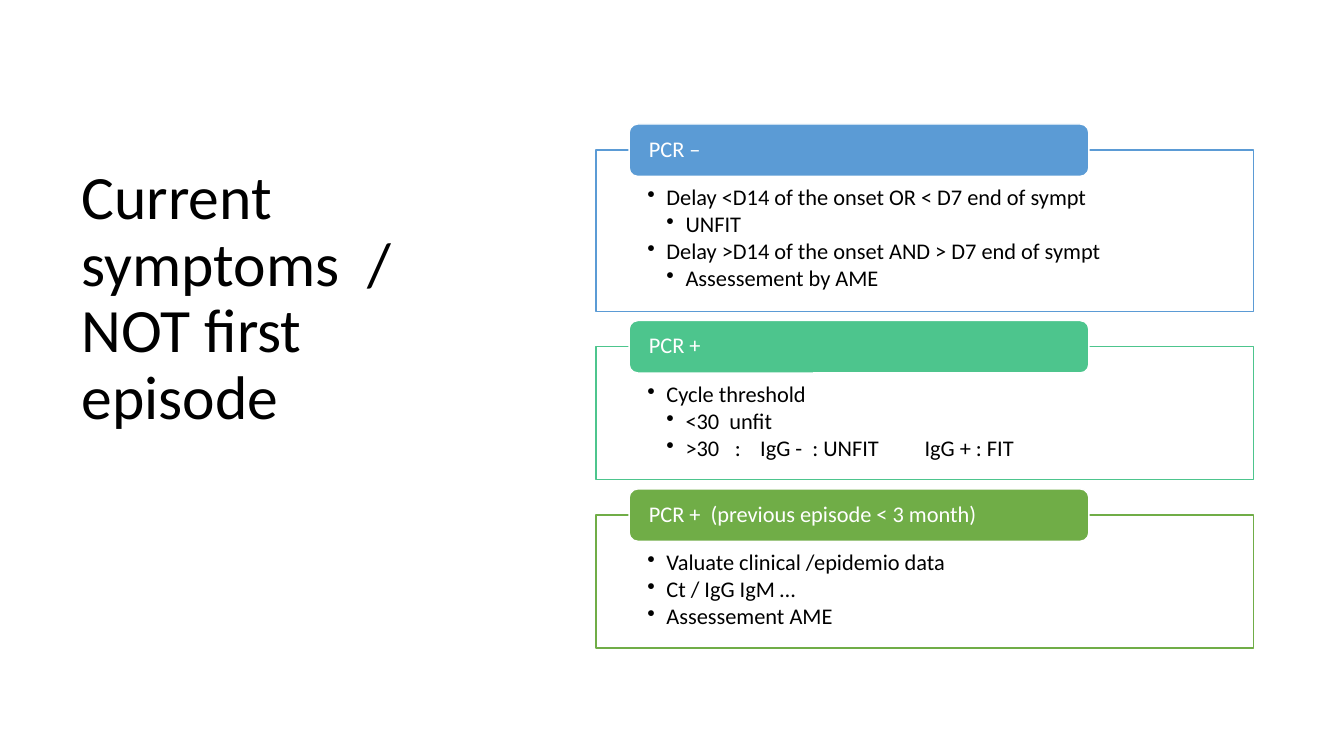
from dataclasses import dataclass

from pptx import Presentation
from pptx.dml.color import RGBColor as RGB
from pptx.enum.shapes import MSO_SHAPE as SHAPE
from pptx.enum.text import MSO_ANCHOR as ANCHOR, MSO_AUTO_SIZE as FIT, PP_ALIGN as ALIGN
from pptx.oxml.xmlchemy import OxmlElement as Node
from pptx.util import Inches, Pt

FONT = "Calibri"
COLORS = {
    "black": "000000",
    "white": "FFFFFF",
    "blue": "5B9BD5",
    "teal": "4DC58D",
    "green": "70AD47",
}
LEFT, WIDTH = 5.91, 6.52
TAG_LEFT, TAG_WIDTH, TAG_HEIGHT = 6.24, 4.56, 0.52
INDENT = 0.19


@dataclass
class Item:
    text: str
    level: int = 1
    tabs: tuple[float, ...] = ()


@dataclass
class Panel:
    title: str
    color: str
    top: float
    height: float
    items: list[Item]


PANELS = [
    Panel("PCR –", "blue", 1.49, 1.6, [
        Item("Delay <D14 of the onset OR < D7 end of sympt"),
        Item("UNFIT", 2),
        Item("Delay >D14 of the onset AND > D7 end of sympt"),
        Item("Assessement by AME", 2),
    ]),
    Panel("PCR +", "teal", 3.44, 1.32, [
        Item("Cycle threshold"),
        Item("<30  unfit", 2),
        Item(">30\t:\tIgG -  : UNFIT\tIgG + : FIT", 2, (0.87, 1.12, 2.75)),
    ]),
    Panel("PCR +  (previous episode < 3 month)", "green", 5.11, 1.32, [
        Item("Valuate clinical /epidemio data"),
        Item("Ct / IgG IgM …"),
        Item("Assessement AME"),
    ]),
]


def paint(name: str) -> RGB:
    return RGB.from_string(COLORS[name])


def add_run(para, text: str, size: float, color: str) -> None:
    para.alignment = ALIGN.LEFT
    para.line_spacing = 0.9
    run = para.add_run()
    run.text = text
    run.font.name = FONT
    run.font.size = Pt(size)
    run.font.color.rgb = paint(color)


def add_box(slide, kind, area: tuple, fill: str, line: str, insets: tuple, anchor):
    """Draw a filled shape and return its text frame."""
    box = slide.shapes.add_shape(kind, *map(Inches, area))
    box.shadow.inherit = False
    box.fill.solid()
    box.fill.fore_color.rgb = paint(fill)
    box.line.color.rgb = paint(line)
    box.line.width = Pt(1)
    frame = box.text_frame
    frame.word_wrap = True
    frame.vertical_anchor = anchor
    side, top, bottom = map(Inches, insets)
    frame.margin_left = frame.margin_right = side
    frame.margin_top, frame.margin_bottom = top, bottom
    return frame


def set_bullet(para, item: Item) -> None:
    """Add the hanging indent, bullet and tab stops."""
    props = para._p.get_or_add_pPr()
    props.set("lvl", str(item.level))
    props.set("marL", str(Inches(INDENT * item.level)))
    props.set("indent", str(Inches(-INDENT)))
    mark = Node("a:buChar")
    mark.set("char", "•")
    props.append(mark)
    if item.tabs:
        stops = Node("a:tabLst")
        for pos in item.tabs:
            stop = Node("a:tab")
            stop.set("pos", str(Inches(pos)))
            stop.set("algn", "l")
            stops.append(stop)
        props.append(stops)


def add_panel(slide, panel: Panel) -> None:
    body = add_box(slide, SHAPE.RECTANGLE, (LEFT, panel.top, WIDTH, panel.height),
                   "white", panel.color, (0.51, 0.36, 0.12), ANCHOR.TOP)
    for num, item in enumerate(panel.items):
        para = body.add_paragraph() if num else body.paragraphs[0]
        add_run(para, item.text, 16, "black")
        para.space_after = Pt(2)
        set_bullet(para, item)
    area = (TAG_LEFT, panel.top - TAG_HEIGHT / 2, TAG_WIDTH, TAG_HEIGHT)
    tag = add_box(slide, SHAPE.ROUNDED_RECTANGLE, area,
                  panel.color, "white", (0.17, 0, 0), ANCHOR.MIDDLE)
    add_run(tag.paragraphs[0], panel.title, 16, "white")


def add_title(slide, text: str) -> None:
    title = slide.shapes.title
    title.left, title.top = Inches(0.71), Inches(1.6)
    title.width, title.height = Inches(4.15), Inches(2.94)
    frame = title.text_frame
    frame.word_wrap = True
    frame.auto_size = FIT.NONE
    frame.vertical_anchor = ANCHOR.TOP
    add_run(frame.paragraphs[0], text, 44, "black")


def main() -> None:
    deck = Presentation()
    deck.slide_width, deck.slide_height = Inches(13.33), Inches(7.5)
    slide = deck.slides.add_slide(deck.slide_layouts.get_by_name("Title Only"))
    add_title(slide, "Current symptoms  / NOT first episode")
    for panel in PANELS:
        add_panel(slide, panel)
    deck.save("out.pptx")


if __name__ == "__main__":
    main()
